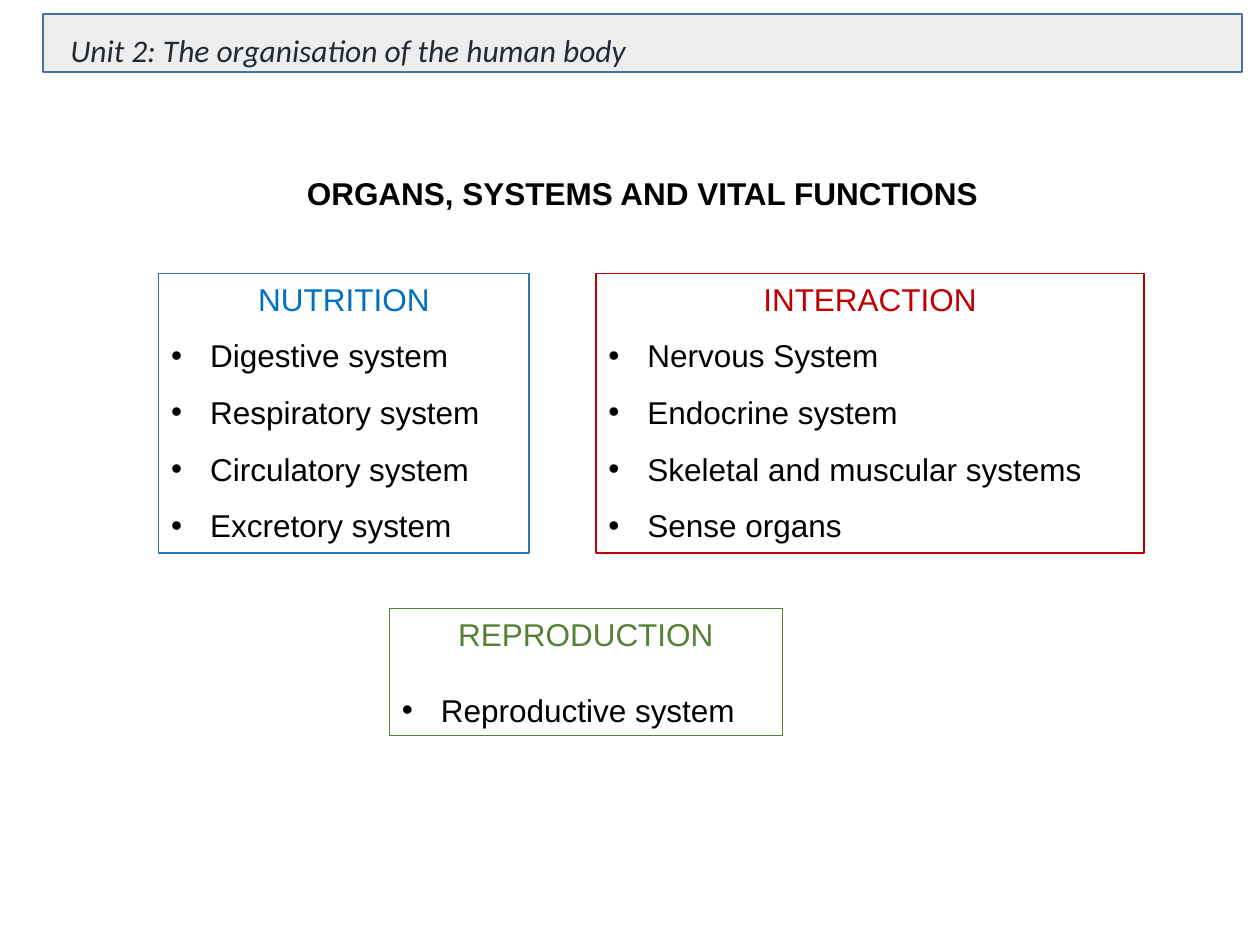
"""Build the slide on organs, systems and vital functions."""
from pptx import Presentation
from pptx.dml.color import RGBColor as Rgb
from pptx.enum.shapes import MSO_SHAPE as Kind
from pptx.enum.text import MSO_ANCHOR as Anchor, PP_ALIGN as Align
from pptx.oxml.ns import qn
from pptx.util import Inches, Pt
from lxml.etree import SubElement

HUES = {
    "black": "000000", "band": "EDEDED", "edge": "43739E", "unit": "222A35",
    "blue": "0070C0", "rim": "2E75B6", "red": "C00000", "green": "548235",
}


def add_box(area, line=None, fill=None, width=0.75):
    place = [Inches(n) for n in area]
    if line:
        box = slide.shapes.add_shape(Kind.RECTANGLE, *place)
        box.shadow.inherit = False
        box.line.color.rgb = Rgb.from_string(HUES[line])
        box.line.width = Pt(width)
        if fill:
            box.fill.solid()
            box.fill.fore_color.rgb = Rgb.from_string(HUES[fill])
        else:
            box.fill.background()
    else:
        box = slide.shapes.add_textbox(*place)
    box.text_frame.word_wrap = True
    box.text_frame.vertical_anchor = Anchor.TOP
    return box.text_frame


def add_run(para, text, hue, face="Arial", align=Align.LEFT):
    para.alignment = align
    run = para.add_run()
    run.text = text
    run.font.name = face
    run.font.size = Pt(18)
    run.font.color.rgb = Rgb.from_string(HUES[hue])
    return run


deck = Presentation()
deck.slide_width, deck.slide_height = Inches(10), Inches(7.5)
slide = deck.slides.add_slide(deck.slide_layouts[6])

add_box((0.34, 0.11, 9.52, 0.46), "edge", "band", 1)

title = add_box((2.28, 1.33, 5.64, 0.4))
add_run(title.paragraphs[0], "ORGANS, SYSTEMS AND VITAL FUNCTIONS", "black",
        align=Align.CENTER).font.bold = True

groups = [
    ("NUTRITION", "blue", "rim", (1.26, 2.17, 2.94, 2.22), 1.5, 0,
     ["Digestive system", "Respiratory system", "Circulatory system",
      "Excretory system"]),
    ("INTERACTION", "red", "red", (4.73, 2.17, 4.35, 2.22), 1.5, 0,
     ["Nervous System", "Endocrine system", "Skeletal and muscular systems",
      "Sense organs"]),
    ("REPRODUCTION", "green", "green", (3.09, 4.83, 3.12, 1.01), 1, 22,
     ["Reproductive system"]),
]
for head, hue, line, area, pitch, gap, items in groups:
    frame = add_box(area, line)
    add_run(frame.paragraphs[0], head, hue, align=Align.CENTER)
    for item in items:
        para = frame.add_paragraph()
        para.line_spacing = float(pitch)
        para.space_before = Pt(gap)
        props = para._p.get_or_add_pPr()
        props.set("marL", str(Inches(0.31)))
        props.set("indent", str(Inches(-0.31)))
        SubElement(props, qn("a:buFont")).set("typeface", "Arial")
        SubElement(props, qn("a:buChar")).set("char", "•")
        add_run(para, item, "black")

unit = add_box((0.46, 0.2, 5.26, 0.4))
add_run(unit.paragraphs[0], "Unit 2: The organisation of the human body",
        "unit", "Calibri").font.italic = True

deck.save("out.pptx")
